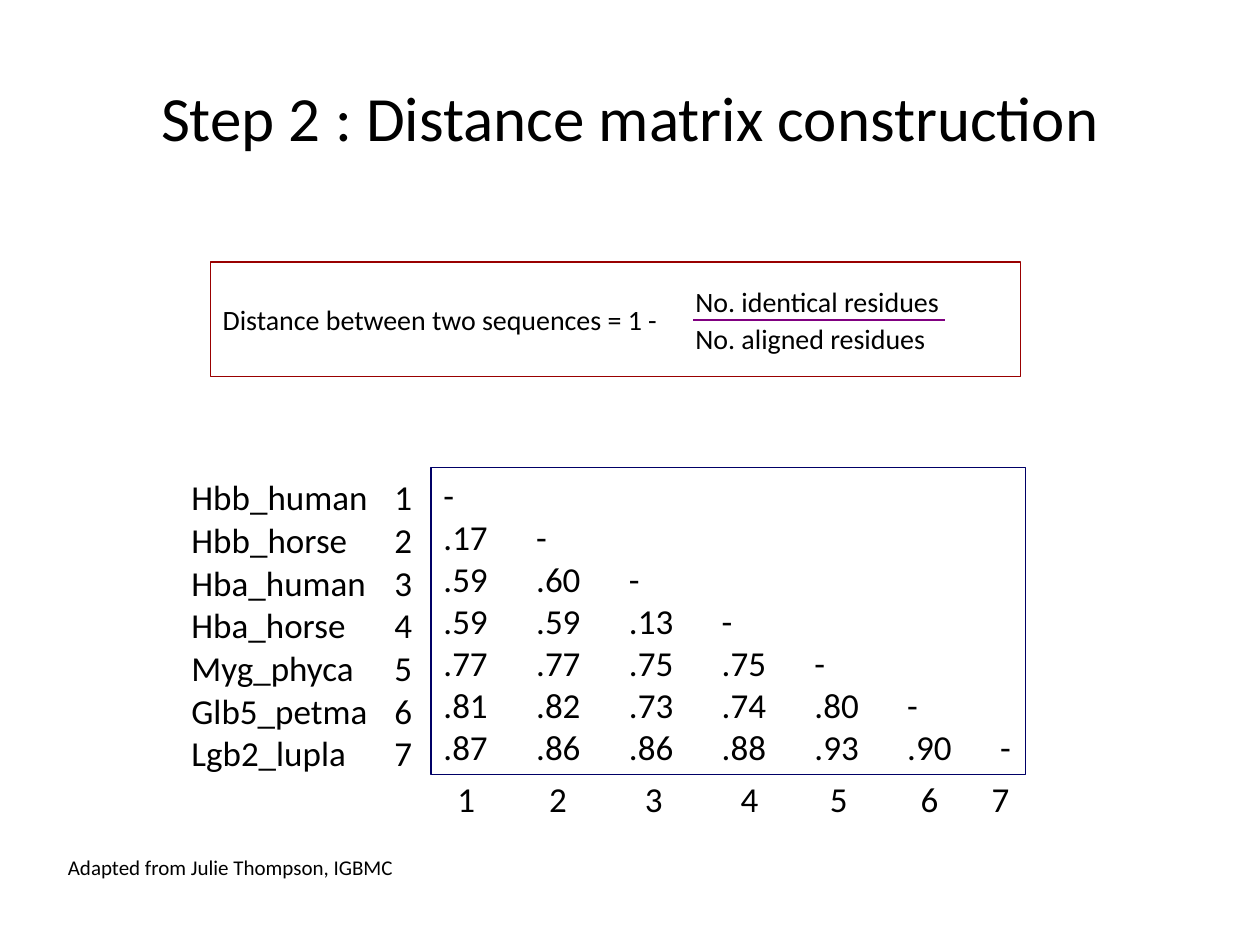
import pptx
import pptx.util
import pptx.dml.color
import pptx.enum.shapes
import pptx.enum.text
import pptx.oxml
import pptx.oxml.ns
from pptx.util import Cm

TITLE = "Step 2 : Distance matrix construction"
FORMULA = "Distance between two sequences = 1 -"
FRACTION = [("No. identical residues", 5.61), ("No. aligned residues", 6.35)]
CREDIT = "Adapted from Julie Thompson, IGBMC"
SEQUENCES = ["Hbb_human", "Hbb_horse", "Hba_human", "Hba_horse",
             "Myg_phyca", "Glb5_petma", "Lgb2_lupla"]
DISTANCES = [
    [],
    [".17"],
    [".59", ".60"],
    [".59", ".59", ".13"],
    [".77", ".77", ".75", ".75"],
    [".81", ".82", ".73", ".74", ".80"],
    [".87", ".86", ".86", ".88", ".93", ".90"],
]
COLUMN_LEFTS = [8.97, 10.82, 12.75, 14.68, 16.48, 18.31, 19.74]
COLORS = {"text": "000000", "paper": "FFFFFF", "formula": "990000",
          "matrix": "000066", "fraction": "800080"}
FONT = "Calibri"
ROW_TOP, ROW_STEP, ROW_HEIGHT = 9.47, 0.86, 1.12
TAB_STEP = 1.87
TOP = pptx.enum.text.MSO_ANCHOR.TOP
MIDDLE = pptx.enum.text.MSO_ANCHOR.MIDDLE
LEFT = pptx.enum.text.PP_ALIGN.LEFT
CENTER = pptx.enum.text.PP_ALIGN.CENTER


def rgb(name):
    return pptx.dml.color.RGBColor.from_string(COLORS[name])


def set_attrs(target, values):
    for name, value in values.items():
        setattr(target, name, value)


def place(s, left, top, width, height):
    set_attrs(s, {"left": Cm(left), "top": Cm(top),
                  "width": Cm(width), "height": Cm(height)})


def write(s, lines, size, anchor=TOP, align=LEFT):
    tf = s.text_frame
    set_attrs(tf, {"word_wrap": True, "vertical_anchor": anchor,
                   "auto_size": pptx.enum.text.MSO_AUTO_SIZE.NONE})
    for i, line in enumerate(lines):
        p = tf.add_paragraph() if i else tf.paragraphs[0]
        p.alignment = align
        r = p.add_run()
        r.text = line
        set_attrs(r.font, {"name": FONT, "size": pptx.util.Pt(size)})
        r.font.color.rgb = rgb("text")
    return tf


def add_text(slide, box, text, size, anchor=TOP):
    s = slide.shapes.add_textbox(*map(Cm, box))
    write(s, [text], size, anchor)


def add_frame(slide, box, color, fill=None):
    s = slide.shapes.add_shape(pptx.enum.shapes.MSO_SHAPE.RECTANGLE, *map(Cm, box))
    s.shadow.inherit = False
    if fill:
        s.fill.solid()
        s.fill.fore_color.rgb = rgb(fill)
    else:
        s.fill.background()
    s.line.color.rgb = rgb(color)
    s.line.width = pptx.util.Pt(0.75)
    return s


def add_tab_stops(p, count):
    tabs = pptx.oxml.ns.qn("a:tabLst")
    pPr = p._p.get_or_add_pPr()
    tab_list = pPr.makeelement(tabs, {})
    for i in range(1, count + 1):
        tab = tab_list.makeelement(pptx.oxml.ns.qn("a:tab"),
                                   {"pos": str(Cm(TAB_STEP * i)), "algn": "l"})
        tab_list.append(tab)
    pPr.append(tab_list)


def add_matrix(slide):
    s = add_frame(slide, (8.69, 9.42, 11.99, 6.2), "matrix")
    tf = write(s, ["\t".join(row + ["-"]) for row in DISTANCES], 20)
    tf.margin_right = 0
    for p, row in zip(tf.paragraphs, DISTANCES):
        if row:
            add_tab_stops(p, len(row))
    for i, (name, left) in enumerate(zip(SEQUENCES, COLUMN_LEFTS)):
        top = ROW_TOP + ROW_STEP * i
        number = str(i + 1)
        add_text(slide, (3.61, top, 4.3, ROW_HEIGHT), name, 20)
        add_text(slide, (7.7, top, 0.9, ROW_HEIGHT), number, 20)
        add_text(slide, (left, 15.54, 0.9, ROW_HEIGHT), number, 20)


def add_formula(slide):
    s = add_frame(slide, (4.24, 5.28, 16.33, 2.31), "formula", "paper")
    write(s, [FORMULA], 16, MIDDLE)
    bar = slide.shapes.add_connector(pptx.enum.shapes.MSO_CONNECTOR.STRAIGHT,
                                     Cm(13.97), Cm(6.45), Cm(19.05), Cm(6.45))
    bar.line.color.rgb = rgb("fraction")
    bar.line.width = pptx.util.Pt(0.75)
    spPr = bar._element.spPr
    spPr.append(spPr.makeelement(pptx.oxml.ns.qn("a:effectLst"), {}))
    for text, top in FRACTION:
        add_text(slide, (13.77, top, 5.6, 0.94), text, 16, MIDDLE)


def main():
    prs = pptx.Presentation()
    set_attrs(prs, {"slide_width": Cm(25.4), "slide_height": Cm(19.05)})
    slide = prs.slides.add_slide(prs.slide_layouts[5])
    title = slide.shapes.title
    place(title, 1.27, 0.76, 22.86, 3.18)
    write(title, [TITLE], 36, MIDDLE, CENTER)
    add_matrix(slide)
    add_formula(slide)
    add_text(slide, (1.12, 16.97, 7.14, 1.02), CREDIT, 12, MIDDLE)
    prs.save("out.pptx")


if __name__ == "__main__":
    main()
